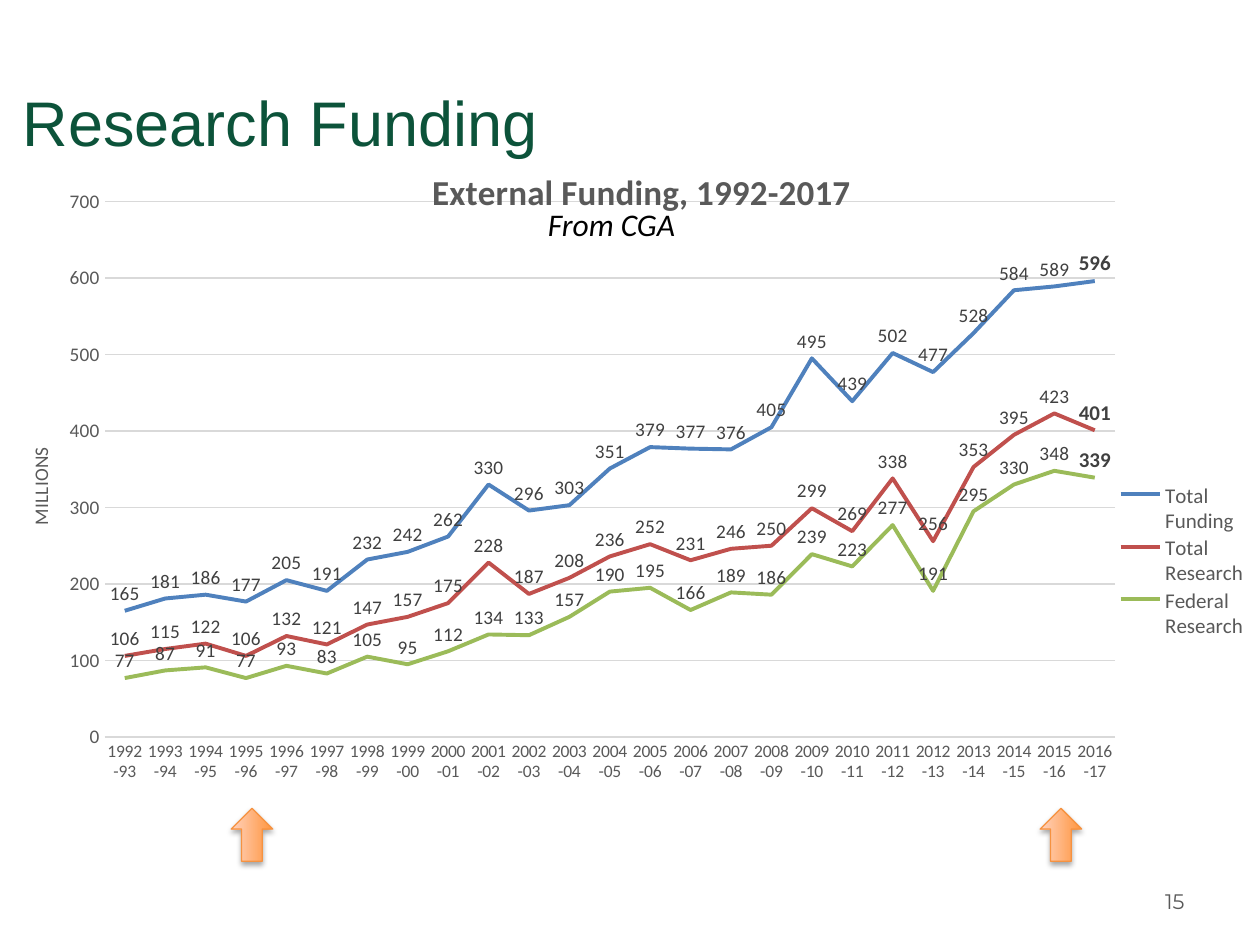
from lxml import etree
from pptx import Presentation
from pptx.chart.data import CategoryChartData
from pptx.dml.color import RGBColor
from pptx.enum.chart import XL_CHART_TYPE, XL_LABEL_POSITION, XL_LEGEND_POSITION, XL_MARKER_STYLE, XL_TICK_MARK
from pptx.enum.shapes import MSO_SHAPE
from pptx.enum.text import MSO_ANCHOR, PP_ALIGN
from pptx.oxml import parse_xml
from pptx.oxml.ns import nsdecls, qn
from pptx.util import Inches, Pt

LINE, ABOVE = XL_CHART_TYPE.LINE, XL_LABEL_POSITION.ABOVE
NO_MARKER, NO_TICK = XL_MARKER_STYLE.NONE, XL_TICK_MARK.NONE
LEFT, RIGHT, MIDDLE = PP_ALIGN.LEFT, PP_ALIGN.RIGHT, MSO_ANCHOR.MIDDLE

GREY, DARK, GRID = "595959", "404040", "D9D9D9"
CHART_W, CHART_H = 9.82, 5.29
YEARS = [f"{y}-{(y + 1) % 100:02d}" for y in range(1992, 2017)]
SERIES = [
    ("Total Funding", "4F81BD",
     [165, 181, 186, 177, 205, 191, 232, 242, 262, 330, 296, 303, 351,
      379, 377, 376, 405, 495, 439, 502, 477, 528, 584, 589, 596]),
    ("Total Research", "C0504D",
     [106, 115, 122, 106, 132, 121, 147, 157, 175, 228, 187, 208, 236,
      252, 231, 246, 250, 299, 269, 338, 256, 353, 395, 423, 401]),
    ("Federal Research", "9BBB59",
     [77, 87, 91, 77, 93, 83, 105, 95, 112, 134, 133, 157, 190,
      195, 166, 189, 186, 239, 223, 277, 191, 295, 330, 348, 339]),
]
ARROW_LEFTS = [1.79, 8.21]


def rgb(value):
    return RGBColor.from_string(value)


def style(font, size, color, name="Calibri", bold=False, italic=False):
    font.size, font.name = Pt(size), name
    font.bold, font.italic = bold, italic
    font.color.rgb = rgb(color)


def place(parent, x, y, w=None, h=None, inner=False):
    """Lay out a chart part by hand, in inches from the chart's corner."""
    for old in parent.findall(qn("c:layout")):
        parent.remove(old)
    items = [("layoutTarget", "inner")] if inner else []
    items += [("xMode", "edge"), ("yMode", "edge"), ("x", x / CHART_W), ("y", y / CHART_H)]
    if w is not None:
        items += [("w", w / CHART_W), ("h", h / CHART_H)]
    layout = etree.Element(qn("c:layout"))
    manual = etree.SubElement(layout, qn("c:manualLayout"))
    for tag, value in items:
        etree.SubElement(manual, qn(f"c:{tag}")).set("val", str(value))
    before = [c for c in parent if c.tag in (qn("c:tx"), qn("c:legendPos"))]
    parent.insert(len(before), layout)


def add_text(slide, text, box, size, color, font, italic=False):
    tf = slide.shapes.add_textbox(*map(Inches, box)).text_frame
    tf.text = text
    style(tf.paragraphs[0].runs[0].font, size, color, font, italic=italic)
    return tf


def add_funding_chart(slide):
    data = CategoryChartData()
    data.categories = YEARS
    for name, _, values in SERIES:
        data.add_series(name, values)
    box = map(Inches, (0.18, 1.12, CHART_W, CHART_H))
    chart = slide.shapes.add_chart(LINE, *box, data).chart
    style(chart.font, 10, "000000")

    title = chart.chart_title
    title.text_frame.text = "External Funding, 1992-2017"
    style(title.text_frame.paragraphs[0].runs[0].font, 20, GREY, bold=True)
    title.include_in_layout = False
    place(title._element, 3.2, 0.16)
    place(chart._chartSpace.chart.plotArea, 0.65, 0.48, 8.02, 4.25, inner=True)

    chart.has_legend = True
    legend = chart.legend
    legend.position = XL_LEGEND_POSITION.RIGHT
    legend.include_in_layout = False
    style(legend.font, 12, GREY)
    place(legend._element, 8.61, 2.7, 1.18, 1.27)

    years, amounts = chart.category_axis, chart.value_axis
    for axis, size in ((years, 10), (amounts, 11)):
        axis.major_tick_mark = axis.minor_tick_mark = NO_TICK
        style(axis.tick_labels.font, size, GREY)
    amounts.minimum_scale, amounts.maximum_scale, amounts.major_unit = 0, 700, 100
    amounts.format.line.fill.background()
    for line in (years.format.line, amounts.major_gridlines.format.line):
        line.color.rgb, line.width = rgb(GRID), Pt(0.75)
    tf = amounts.axis_title.text_frame
    tf.text = "MILLIONS"
    tf._txBody.bodyPr.set("rot", "-5400000")
    style(tf.paragraphs[0].runs[0].font, 11, GREY)
    place(amounts.axis_title._element, 0.01, 2.4)

    for series, (_, color, values) in zip(chart.plots[0].series, SERIES):
        series.smooth = False
        series.marker.style = NO_MARKER
        series.format.line.color.rgb = rgb(color)
        series.format.line.width = Pt(2.25)
        labels = series.data_labels
        labels.show_value = True
        labels.position = ABOVE
        style(labels.font, 11, DARK)
        last = series.points[len(values) - 1].data_label
        style(last.font, 12, DARK, bold=True)
        last.position = ABOVE


def add_up_arrow(slide, left):
    sp = slide.shapes.add_shape(MSO_SHAPE.RIGHT_ARROW, *map(Inches, (left, 6.46, 0.42, 0.33)))
    sp.rotation = 270
    sp.fill.gradient()
    sp.fill.gradient_angle = 90
    for stop, position, color in zip(sp.fill.gradient_stops, (0, 1), ("FF953E", "FFD2BD")):
        stop.position, stop.color.rgb = position, rgb(color)
    sp.line.color.rgb, sp.line.width = rgb("F69240"), Pt(0.75)
    sp._element.spPr.append(parse_xml(
        f'<a:effectLst {nsdecls("a")}><a:outerShdw blurRad="{Pt(3.1)}" dist="{Pt(1.8)}" '
        'dir="5400000" rotWithShape="0"><a:srgbClr val="000000"><a:alpha val="35000"/>'
        '</a:srgbClr></a:outerShdw></a:effectLst>'))


def main():
    prs = Presentation()
    prs.slide_width, prs.slide_height = Inches(10), Inches(7.5)
    slide = prs.slides.add_slide(prs.slide_layouts[5])

    title = slide.shapes.title
    title.left, title.top, title.width, title.height = map(Inches, (0.08, 0.46, 8.5, 1))
    tf = title.text_frame
    tf.text = "Research Funding"
    tf.vertical_anchor = MIDDLE
    tf.paragraphs[0].alignment = LEFT
    style(tf.paragraphs[0].runs[0].font, 36, "0C533A", "Arial")

    add_funding_chart(slide)
    for left in ARROW_LEFTS:
        add_up_arrow(slide, left)
    add_text(slide, "From CGA", (4.25, 1.58, 1.23, 0.4), 18, "000000", "Calibri", italic=True)
    number = add_text(slide, "15", (7.17, 6.95, 2.33, 0.4), 12, GREY, "Montserrat")
    number.vertical_anchor = MIDDLE
    number.paragraphs[0].alignment = RIGHT

    prs.save("out.pptx")


if __name__ == "__main__":
    main()
